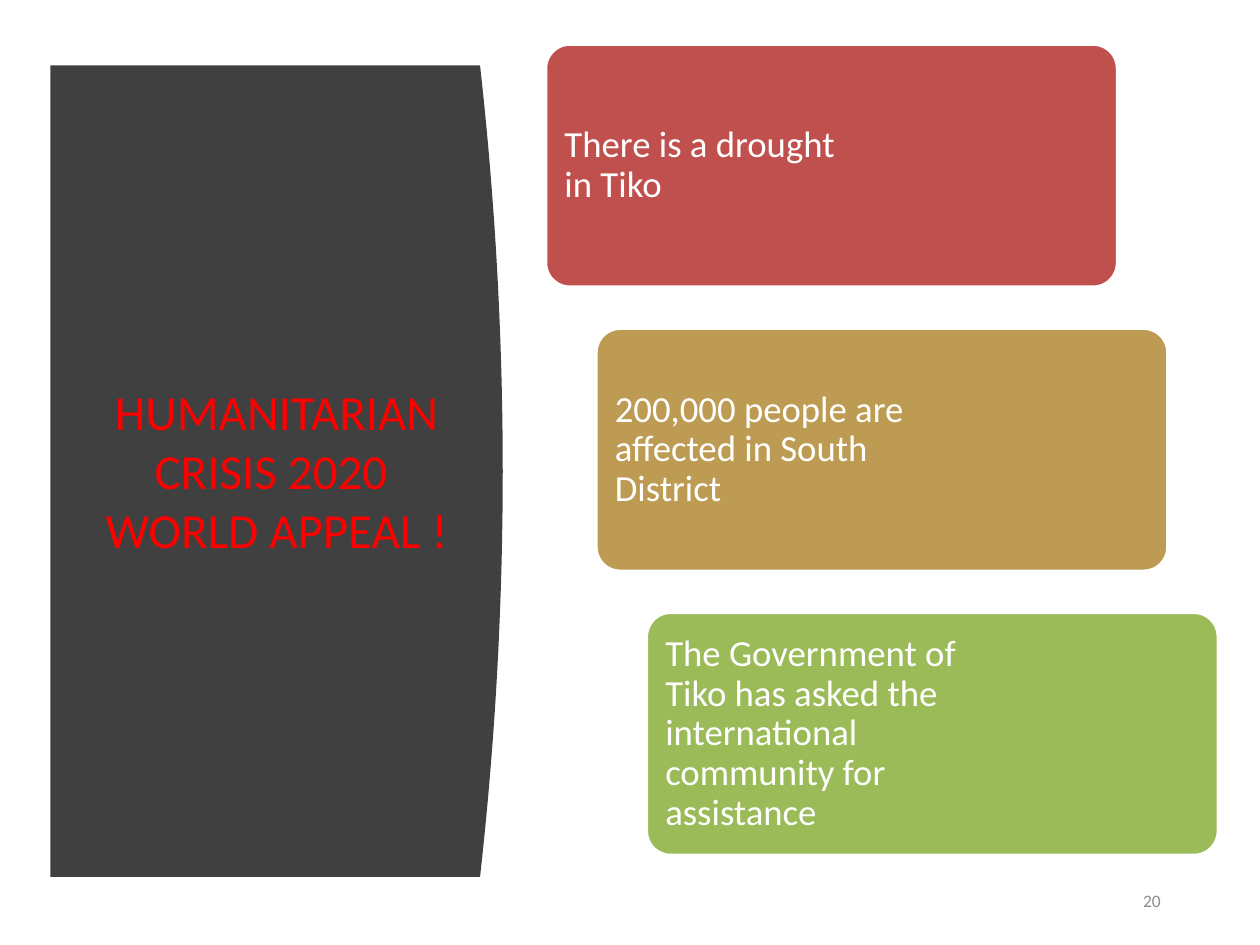
from dataclasses import dataclass

import pptx
import pptx.dml.color
import pptx.enum.shapes
import pptx.enum.text
import pptx.util
from pptx.enum.text import PP_ALIGN
from pptx.util import Inches


@dataclass
class Box:
    left: float
    top: float
    width: float
    height: float

    def lengths(self) -> list:
        return [Inches(side) for side in (self.left, self.top, self.width, self.height)]


@dataclass
class Fact:
    text: str
    fill: str
    text_width: float


FACTS = [
    Fact("There is a drought in Tiko", "C0504D", 2.46),
    Fact("200,000 people are affected in South District", "BD9B53", 2.77),
    Fact("The Government of Tiko has asked the international community for assistance",
         "9BBB59", 2.77),
]
FIRST_CARD = Box(4.33, 0.35, 4.54, 1.93)
STEP_RIGHT, STEP_DOWN = 0.4, 2.255
CARD_PADDING = 0.06
PANEL = Box(0.4, 0.52, 3.59, 6.44)
PANEL_BULGE = 0.18
CURVE_STEPS = 40


def colour(hex_value: str) -> pptx.dml.color.RGBColor:
    return pptx.dml.color.RGBColor.from_string(hex_value)


def add_text(slide, box: Box, text: str, size: float, hex_value: str,
             align: PP_ALIGN, inset: float = 0.1, spacing: float = 1.0) -> None:
    frame = slide.shapes.add_textbox(*box.lengths()).text_frame
    frame.word_wrap = True
    frame.vertical_anchor = pptx.enum.text.MSO_ANCHOR.MIDDLE
    frame.margin_left = frame.margin_right = Inches(inset)
    frame.margin_top = frame.margin_bottom = Inches(min(inset, 0.09))
    paragraph = frame.paragraphs[0]
    paragraph.text = text
    paragraph.alignment = align
    paragraph.line_spacing = spacing
    paragraph.font.name = "Calibri"
    paragraph.font.size = pptx.util.Pt(size)
    paragraph.font.color.rgb = colour(hex_value)


def add_panel(slide) -> None:
    right = PANEL.left + PANEL.width
    edge = []
    for step in range(CURVE_STEPS + 1):
        progress = step / CURVE_STEPS
        x = right - PANEL_BULGE * (2 * progress - 1) ** 2
        edge.append((Inches(x), Inches(PANEL.top + PANEL.height * progress)))
    bottom_left = (Inches(PANEL.left), Inches(PANEL.top + PANEL.height))
    outline = slide.shapes.build_freeform(Inches(PANEL.left), Inches(PANEL.top))
    outline.add_line_segments(edge + [bottom_left], close=True)
    panel = outline.convert_to_shape()
    panel.shadow.inherit = False
    panel.fill.solid()
    panel.fill.fore_color.rgb = colour("404040")
    panel.line.fill.background()


def add_fact(slide, fact: Fact, position: int) -> None:
    box = Box(FIRST_CARD.left + position * STEP_RIGHT, FIRST_CARD.top + position * STEP_DOWN,
              FIRST_CARD.width, FIRST_CARD.height)
    card = slide.shapes.add_shape(
        pptx.enum.shapes.MSO_SHAPE.ROUNDED_RECTANGLE, *box.lengths())
    card.adjustments[0] = 0.1
    card.shadow.inherit = False
    card.fill.solid()
    card.fill.fore_color.rgb = colour(fact.fill)
    card.line.color.rgb = colour("FFFFFF")
    card.line.width = pptx.util.Pt(2)
    text_box = Box(box.left + CARD_PADDING, box.top + CARD_PADDING,
                   fact.text_width, box.height - 2 * CARD_PADDING)
    add_text(slide, text_box, fact.text, 21, "FFFFFF", PP_ALIGN.LEFT, 0.09, 0.9)


def main() -> None:
    deck = pptx.Presentation()
    deck.slide_width, deck.slide_height = Inches(10), Inches(7.5)
    slide = deck.slides.add_slide(deck.slide_layouts[6])
    add_panel(slide)
    add_text(slide, Box(0.71, 1.11, 2.97, 5.24),
             "HUMANITARIAN CRISIS 2020 \vWORLD APPEAL !", 28, "FF0000", PP_ALIGN.CENTER)
    add_text(slide, Box(8.8, 6.95, 0.51, 0.4), "20", 10, "8C8C8C", PP_ALIGN.RIGHT)
    for position, fact in enumerate(FACTS):
        add_fact(slide, fact, position)
    deck.save("out.pptx")


if __name__ == "__main__":
    main()
